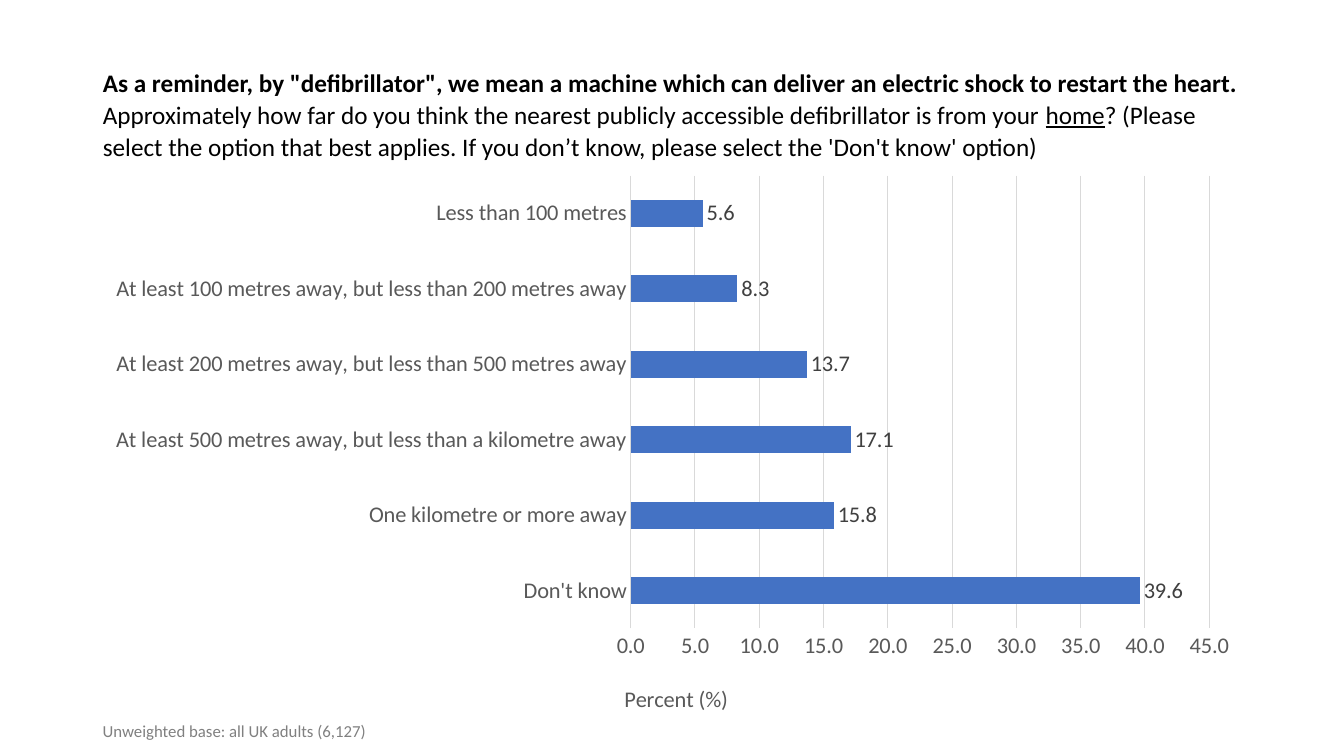
from dataclasses import dataclass

from lxml import etree
from pptx import Presentation
from pptx.chart.data import CategoryChartData
from pptx.dml.color import RGBColor
from pptx.enum.chart import XL_CHART_TYPE, XL_LABEL_POSITION, XL_TICK_MARK
from pptx.enum.text import MSO_ANCHOR, MSO_AUTO_SIZE, PP_ALIGN
from pptx.oxml.ns import qn
from pptx.util import Pt

BAR_CLUSTERED = XL_CHART_TYPE.BAR_CLUSTERED
OUTSIDE_END = XL_LABEL_POSITION.OUTSIDE_END
NO_TICK = XL_TICK_MARK.NONE
MIDDLE = MSO_ANCHOR.MIDDLE
NO_AUTOFIT = MSO_AUTO_SIZE.NONE
LEFT = PP_ALIGN.LEFT
EMU_PER_PX = 9144
TITLE_ONLY_LAYOUT = 5

QUESTION = [
    ('As a reminder, by "defibrillator", we mean a machine which can deliver '
     'an electric shock to restart the heart.\v', True, False),
    ("Approximately how far do you think the nearest publicly accessible "
     "defibrillator is from your ", False, False),
    ("home", False, True),
    ("? (Please select the option that best applies. If you don’t know, "
     "please select the 'Don't know' option)", False, False),
]

DISTANCES = {
    "Don't know": 39.6,
    "One kilometre or more away": 15.8,
    "At least 500 metres away, but less than a kilometre away": 17.1,
    "At least 200 metres away, but less than 500 metres away": 13.7,
    "At least 100 metres away, but less than 200 metres away": 8.3,
    "Less than 100 metres": 5.6,
}


@dataclass(frozen=True)
class Theme:
    font: str = "Calibri"
    title: str = "000000"
    note: str = "808080"
    axis: str = "595959"
    label: str = "404040"
    grid: str = "D9D9D9"
    bar: str = "4472C4"
    title_size: int = 18
    chart_size: int = 16
    note_size: int = 12
    line_width: float = 0.75


def px(length):
    return length * EMU_PER_PX


class SlideBuilder:
    def __init__(self, slide, theme):
        self.slide = slide
        self.theme = theme

    def style_font(self, font, size, color):
        font.name = self.theme.font
        font.size = Pt(size)
        font.color.rgb = RGBColor.from_string(color)

    def style_line(self, line):
        line.color.rgb = RGBColor.from_string(self.theme.grid)
        line.width = Pt(self.theme.line_width)

    def add_title(self, pieces, left, top, width, height):
        shape = self.slide.shapes.title
        shape.left, shape.top = px(left), px(top)
        shape.width, shape.height = px(width), px(height)
        frame = shape.text_frame
        frame.word_wrap = True
        frame.auto_size = NO_AUTOFIT
        frame.vertical_anchor = MIDDLE
        paragraph = frame.paragraphs[0]
        paragraph.alignment = LEFT
        paragraph.line_spacing = 1.07
        self.style_font(paragraph.font, self.theme.title_size, self.theme.title)
        for text, bold, underline in pieces:
            run = paragraph.add_run()
            run.text = text.rstrip("\v")
            self.style_font(run.font, self.theme.title_size, self.theme.title)
            run.font.bold = bold
            run.font.underline = underline
            if text.endswith("\v"):
                paragraph.add_line_break()

    def add_note(self, text, left, top, width, height):
        shape = self.slide.shapes.add_textbox(px(left), px(top), px(width), px(height))
        shape.text_frame.word_wrap = True
        paragraph = shape.text_frame.paragraphs[0]
        paragraph.text = text
        self.style_font(paragraph.font, self.theme.note_size, self.theme.note)

    def place_chart_part(self, part, **settings):
        layout = part.find(qn("c:layout"))
        if layout is None:
            layout = etree.Element(qn("c:layout"))
            part.insert(0, layout)
        manual = etree.SubElement(layout, qn("c:manualLayout"))
        for name, value in settings.items():
            etree.SubElement(manual, qn(f"c:{name}")).set("val", str(value))

    def add_bar_chart(self, values, axis_title, left, top, width, height):
        theme = self.theme
        data = CategoryChartData(number_format="0.0")
        data.categories = list(values)
        data.add_series("Series 1", list(values.values()))
        chart = self.slide.shapes.add_chart(
            BAR_CLUSTERED, px(left), px(top), px(width), px(height), data
        ).chart
        chart.has_legend = False
        chart.has_title = False
        self.style_font(chart.font, theme.chart_size, theme.title)

        plot = chart.plots[0]
        plot.gap_width = 182
        plot.vary_by_categories = False
        fill = plot.series[0].format.fill
        fill.solid()
        fill.fore_color.rgb = RGBColor.from_string(theme.bar)
        plot.has_data_labels = True
        labels = plot.data_labels
        labels.show_value = True
        labels.position = OUTSIDE_END
        labels.number_format = "0.0"
        labels.number_format_is_linked = False
        self.style_font(labels.font, theme.chart_size, theme.label)

        for axis in (chart.category_axis, chart.value_axis):
            axis.major_tick_mark = NO_TICK
            axis.minor_tick_mark = NO_TICK
            self.style_font(axis.tick_labels.font, theme.chart_size, theme.axis)
        self.style_line(chart.category_axis.format.line)

        value_axis = chart.value_axis
        value_axis.minimum_scale = 0
        value_axis.maximum_scale = 45
        value_axis.major_unit = 5
        value_axis.tick_labels.number_format = "0.0"
        value_axis.tick_labels.number_format_is_linked = False
        value_axis.format.line.fill.background()
        value_axis.has_major_gridlines = True
        self.style_line(value_axis.major_gridlines.format.line)

        title = value_axis.axis_title
        paragraph = title.text_frame.paragraphs[0]
        paragraph.text = axis_title
        self.style_font(paragraph.font, theme.chart_size, theme.axis)
        paragraph.font.bold = False

        self.place_chart_part(
            title._element, xMode="edge", yMode="edge", x=0.455, y=0.915
        )
        self.place_chart_part(
            chart._chartSpace.chart.plotArea, layoutTarget="inner",
            xMode="edge", yMode="edge", x=0.464, y=0.02, w=0.499, h=0.804,
        )


def main():
    presentation = Presentation()
    presentation.slide_width = px(1333)
    presentation.slide_height = px(750)
    layout = presentation.slide_layouts[TITLE_ONLY_LAYOUT]
    builder = SlideBuilder(presentation.slides.add_slide(layout), Theme())
    builder.add_title(QUESTION, 92, 40, 1150, 145)
    builder.add_note("Unweighted base: all UK adults (6,127)", 92, 710, 1203, 30)
    builder.add_bar_chart(DISTANCES, "Percent (%)", 92, 163, 1150, 559)
    presentation.save("out.pptx")


if __name__ == "__main__":
    main()
